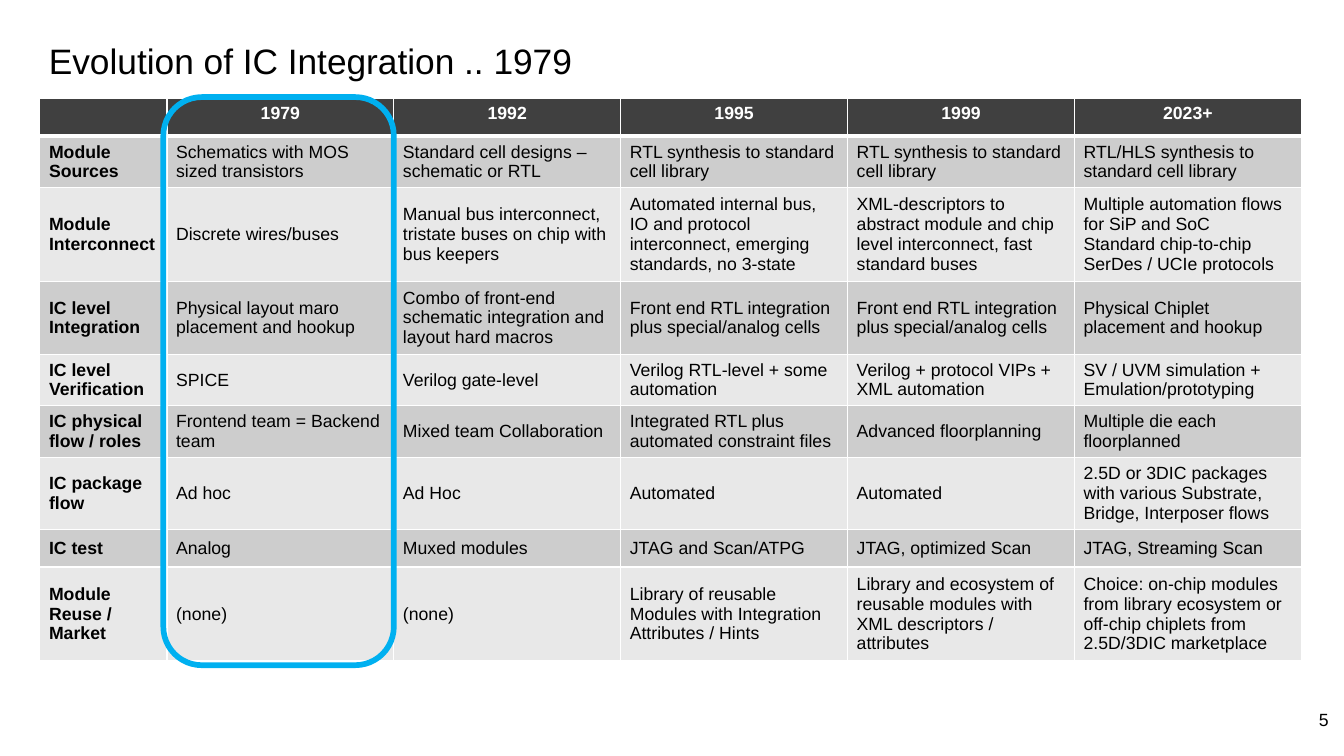
from lxml import etree
from pptx import Presentation
from pptx.dml.color import RGBColor
from pptx.enum.shapes import MSO_SHAPE
from pptx.enum.text import MSO_ANCHOR, PP_ALIGN
from pptx.oxml.ns import qn
from pptx.util import Inches, Pt

LEFT, CENTER, RIGHT = PP_ALIGN.LEFT, PP_ALIGN.CENTER, PP_ALIGN.RIGHT
TOP, MIDDLE = MSO_ANCHOR.TOP, MSO_ANCHOR.MIDDLE
ROUND = MSO_SHAPE.ROUNDED_RECTANGLE

COLORS = {
    "ink": "000000",
    "white": "FFFFFF",
    "head": "404040",
    "dark": "CDCDCD",
    "light": "E8E8E8",
    "ring": "00B0F0",
}
WIDTHS = [1.4] + [2.5] * 5
ROW = 0.41
YEARS = ["", "1979", "1992", "1995", "1999", "2023+"]
TOPICS = [
    ["Module Sources", "Schematics with MOS sized transistors",
     "Standard cell designs – schematic or RTL",
     "RTL synthesis to standard cell library",
     "RTL synthesis to standard cell library",
     "RTL/HLS synthesis to standard cell library"],
    ["Module Interconnect", "Discrete wires/buses",
     "Manual bus interconnect, tristate buses on chip with bus keepers",
     "Automated internal bus, IO and protocol interconnect, emerging standards, no 3-state",
     "XML-descriptors to abstract module and chip level interconnect, fast standard buses",
     "Multiple automation flows for SiP and SoC\nStandard chip-to-chip SerDes / UCIe protocols"],
    ["IC level Integration", "Physical layout maro placement and hookup",
     "Combo of front-end schematic integration and layout hard macros",
     "Front end RTL integration plus special/analog cells",
     "Front end RTL integration plus special/analog cells",
     "Physical Chiplet placement and hookup"],
    ["IC level Verification", "SPICE", "Verilog gate-level",
     "Verilog RTL-level + some automation",
     "Verilog + protocol VIPs + XML automation",
     "SV / UVM simulation + Emulation/prototyping"],
    ["IC physical flow / roles", "Frontend team = Backend team",
     "Mixed team Collaboration",
     "Integrated RTL plus automated constraint files",
     "Advanced floorplanning", "Multiple die each floorplanned"],
    ["IC package flow", "Ad hoc", "Ad Hoc", "Automated", "Automated",
     "2.5D or 3DIC packages with various Substrate, Bridge, Interposer flows"],
    ["IC test", "Analog", "Muxed modules", "JTAG and Scan/ATPG",
     "JTAG, optimized Scan", "JTAG, Streaming Scan"],
    ["Module Reuse / Market", "(none)", "(none)",
     "Library of reusable Modules with Integration Attributes / Hints",
     "Library and ecosystem of reusable modules with XML descriptors / attributes",
     "Choice: on-chip modules from library ecosystem or off-chip chiplets from 2.5D/3DIC marketplace"],
]


def color(name):
    return RGBColor.from_string(COLORS[name])


def apply(target, values):
    for key, value in values.items():
        setattr(target, key, value)


class Deck:
    font = "Arial"

    def __init__(self, width, height):
        self.show = Presentation()
        apply(self.show, {"slide_width": Inches(width), "slide_height": Inches(height)})
        self.slide = self.show.slides.add_slide(self.show.slide_layouts[6])

    def words(self, frame, text, size=14, ink="ink", align=LEFT, bold=False):
        frame.text = text
        for para in frame.paragraphs:
            para.alignment = align
            apply(para.font, {"name": self.font, "size": Pt(size), "bold": bold})
            para.font.color.rgb = color(ink)

    def label(self, text, box, inset, **style):
        frame = self.slide.shapes.add_textbox(*map(Inches, box)).text_frame
        sides = ("left", "top", "right", "bottom")
        apply(frame, {f"margin_{side}": Inches(inset) for side in sides})
        apply(frame, {"word_wrap": True, "vertical_anchor": TOP})
        self.words(frame, text, **style)

    def border(self, cell, top, bottom):
        """Draw white cell edges; top and bottom are widths in points."""
        props = cell._tc.get_or_add_tcPr()
        for side, width in {"L": 1, "R": 1, "T": top, "B": bottom}.items():
            line = etree.SubElement(props, qn(f"a:ln{side}"), w=str(Pt(width)))
            fill = etree.SubElement(line, qn("a:solidFill"))
            etree.SubElement(fill, qn("a:srgbClr"), val=COLORS["white"])

    def grid(self, rows, left, top):
        size = (left, top, sum(WIDTHS), ROW * len(rows))
        table = self.slide.shapes.add_table(
            len(rows), len(WIDTHS), *map(Inches, size)).table
        table.horz_banding = False
        for column, width in zip(table.columns, WIDTHS):
            column.width = Inches(width)
        for r, row in enumerate(rows):
            table.rows[r].height = Inches(ROW)
            head = r == 0
            shade = "head" if head else "dark" if r % 2 else "light"
            for c, text in enumerate(row):
                cell = table.cell(r, c)
                self.border(cell, 3 if r == 1 else 1, 3 if head else 1)
                cell.fill.solid()
                cell.fill.fore_color.rgb = color(shade)
                cell.vertical_anchor = TOP if head else MIDDLE
                self.words(cell.text_frame, text, ink="white" if head else "ink",
                           align=CENTER if head else LEFT, bold=head or c == 0)

    def ring(self, box, tint, width):
        shape = self.slide.shapes.add_shape(ROUND, *map(Inches, box))
        shape.adjustments[0] = 0.167
        shape.shadow.inherit = False
        shape.fill.background()
        shape.line.color.rgb = color(tint)
        shape.line.width = Pt(width)


def main():
    deck = Deck(14.81, 8.33)
    deck.label("Evolution of IC Integration .. 1979", (0.44, 0.33, 13.93, 1), 0.1, size=28)
    deck.label("5", (13.86, 7.7, 0.89, 0.64), 0.11, align=RIGHT)
    deck.grid([YEARS] + TOPICS, 0.44, 1.09)
    deck.ring((1.8, 1.07, 2.54, 6.26), "ring", 4.5)
    deck.show.save("out.pptx")


if __name__ == "__main__":
    main()
